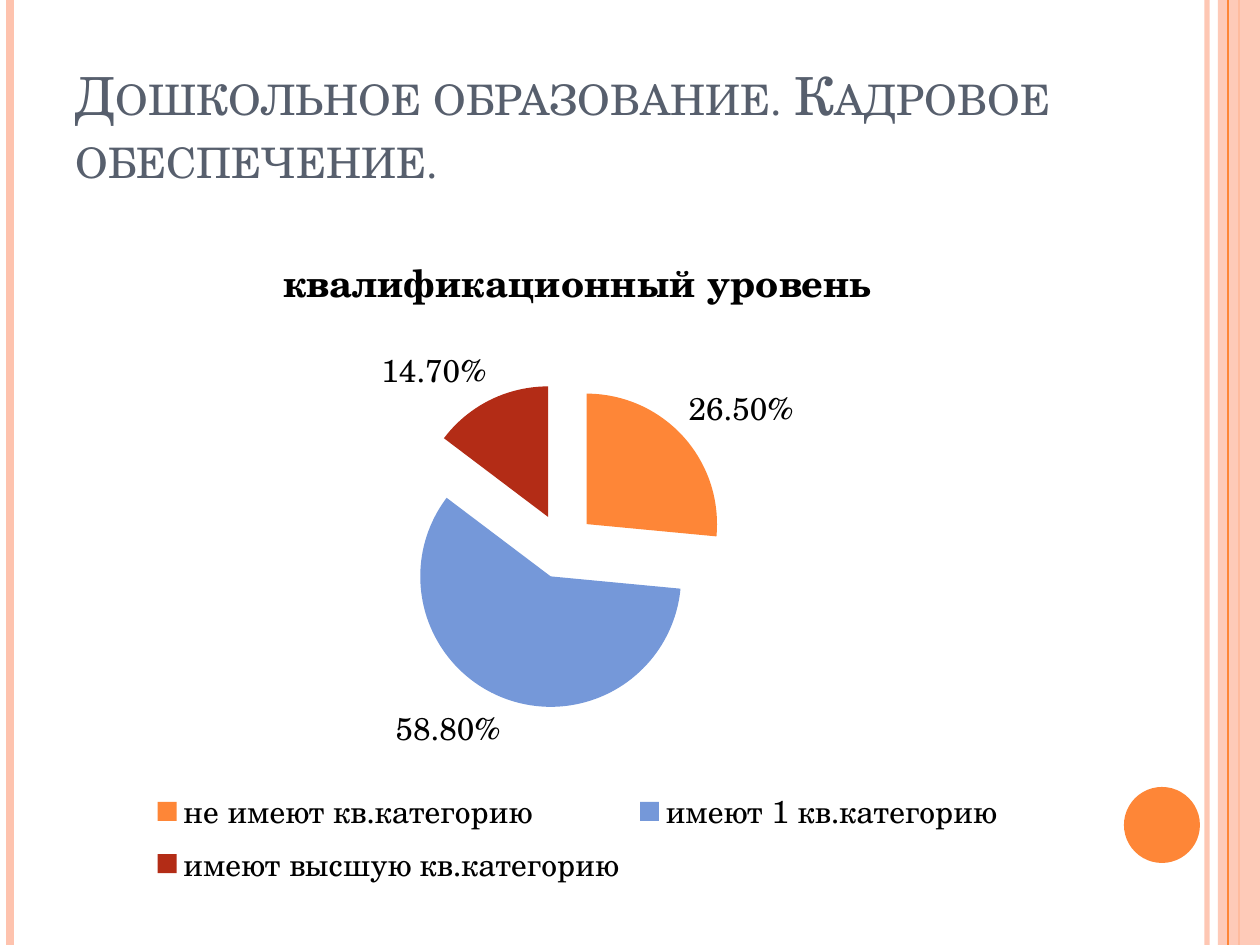
from lxml.etree import SubElement
from pptx import Presentation
from pptx.chart.data import CategoryChartData
from pptx.dml.color import RGBColor
from pptx.enum.chart import XL_CHART_TYPE, XL_LABEL_POSITION, XL_LEGEND_POSITION
from pptx.enum.shapes import MSO_CONNECTOR, MSO_SHAPE
from pptx.enum.text import MSO_ANCHOR
from pptx.oxml import parse_xml
from pptx.oxml.ns import nsdecls, qn
from pptx.util import Pt

PX = 914400 / 126
WIDTH, HEIGHT = 1260, 945
THEME = {
    "font": "TeX Gyre Schola",
    "title": "575F6D",
    "text": "000000",
    "accent": "FE8637",
    "pale": "FEC3AE",
    "slices": ["FE8637", "7598D9", "B32C16"],
    "title_size": 30,
    "chart_title_size": 21.6,
    "chart_size": 18,
}


def px(*lengths):
    return [round(length * PX) for length in lengths]


def write(text_frame, text, size, color, bold=False, small_caps=False):
    paragraph = text_frame.paragraphs[0]
    run = paragraph.add_run()
    run.text = text
    run.font.name = THEME["font"]
    run.font.size = Pt(size)
    run.font.bold = bold
    run.font.color.rgb = RGBColor.from_string(color)
    if small_caps:
        run.font._element.set("cap", "small")


presentation = Presentation()
presentation.slide_width, presentation.slide_height = px(WIDTH, HEIGHT)
slide = presentation.slides.add_slide(presentation.slide_layouts[6])
shapes = slide.shapes

decorations = [
    ("line", 1207, "pale", 3, 93),
    ("line", 10, "pale", 4.5, 100),
    ("line", 1239, "accent", 1.5, 100),
    (MSO_SHAPE.RECTANGLE, (1218, 0, 42, HEIGHT), "pale", 0, 87),
    ("line", 1228, "accent", 0.75, 100),
    (MSO_SHAPE.OVAL, (1124, 787, 76, 76), "accent", 0, 100),
]
for kind, place, color, weight, opacity in decorations:
    if kind == "line":
        shape = shapes.add_connector(MSO_CONNECTOR.STRAIGHT, *px(place, 0, place, HEIGHT))
        shape.line.width = Pt(weight)
        fill = shape.line.fill
        SubElement(shape._element.spPr, qn("a:effectLst"))
    else:
        shape = shapes.add_shape(kind, *px(*place))
        shape.shadow.inherit = False
        shape.line.fill.background()
        fill = shape.fill
    fill.solid()
    fill.fore_color.rgb = RGBColor.from_string(THEME[color])
    if opacity < 100:
        for color_element in shape._element.spPr.iter(qn("a:srgbClr")):
            SubElement(color_element, qn("a:alpha"), val=str(opacity * 1000))

title_frame = shapes.add_textbox(*px(63, 38, 1029, 157)).text_frame
title_frame.word_wrap = True
title_frame.vertical_anchor = MSO_ANCHOR.BOTTOM
write(title_frame, "Дошкольное образование. Кадровое обеспечение.",
      size=THEME["title_size"], color=THEME["title"], small_caps=True)

chart_data = CategoryChartData(number_format="0.00%")
chart_data.categories = ["не имеют кв.категорию", "имеют 1 кв.категорию", "имеют высшую кв.категорию"]
chart_data.add_series("квалификационный уровень", [0.265, 0.588, 0.147])
chart = shapes.add_chart(XL_CHART_TYPE.PIE, *px(63, 221, 1029, 672), chart_data).chart
chart.font.name = THEME["font"]
chart.font.size = Pt(THEME["chart_size"])
chart.font.color.rgb = RGBColor.from_string(THEME["text"])
chart.has_title = True
write(chart.chart_title.text_frame, "квалификационный уровень",
      size=THEME["chart_title_size"], color=THEME["text"], bold=True)
chart.chart_title.include_in_layout = False
chart.has_legend = True
chart.legend.position = XL_LEGEND_POSITION.BOTTOM
chart.legend.include_in_layout = False

plot = chart.plots[0]
plot.vary_by_categories = True
series = plot.series[0]
series_name = series._element.find(qn("c:tx"))
series_name.addnext(parse_xml(f'<c:explosion {nsdecls("c")} val="25"/>'))
for index, color in enumerate(THEME["slices"]):
    slice_fill = series.points[index].format.fill
    slice_fill.solid()
    slice_fill.fore_color.rgb = RGBColor.from_string(color)
    SubElement(series._element.findall(qn("c:dPt"))[index], qn("c:explosion"), val="25")
    point_element = series._element.findall(qn("c:dPt"))[index]
    point_element.find(qn("c:spPr")).addprevious(point_element.find(qn("c:explosion")))

labels = series.data_labels
labels.show_value = True
labels.show_percentage = False
labels.number_format = "0.00%"
labels.number_format_is_linked = False
labels.position = XL_LABEL_POSITION.OUTSIDE_END

presentation.save("out.pptx")
